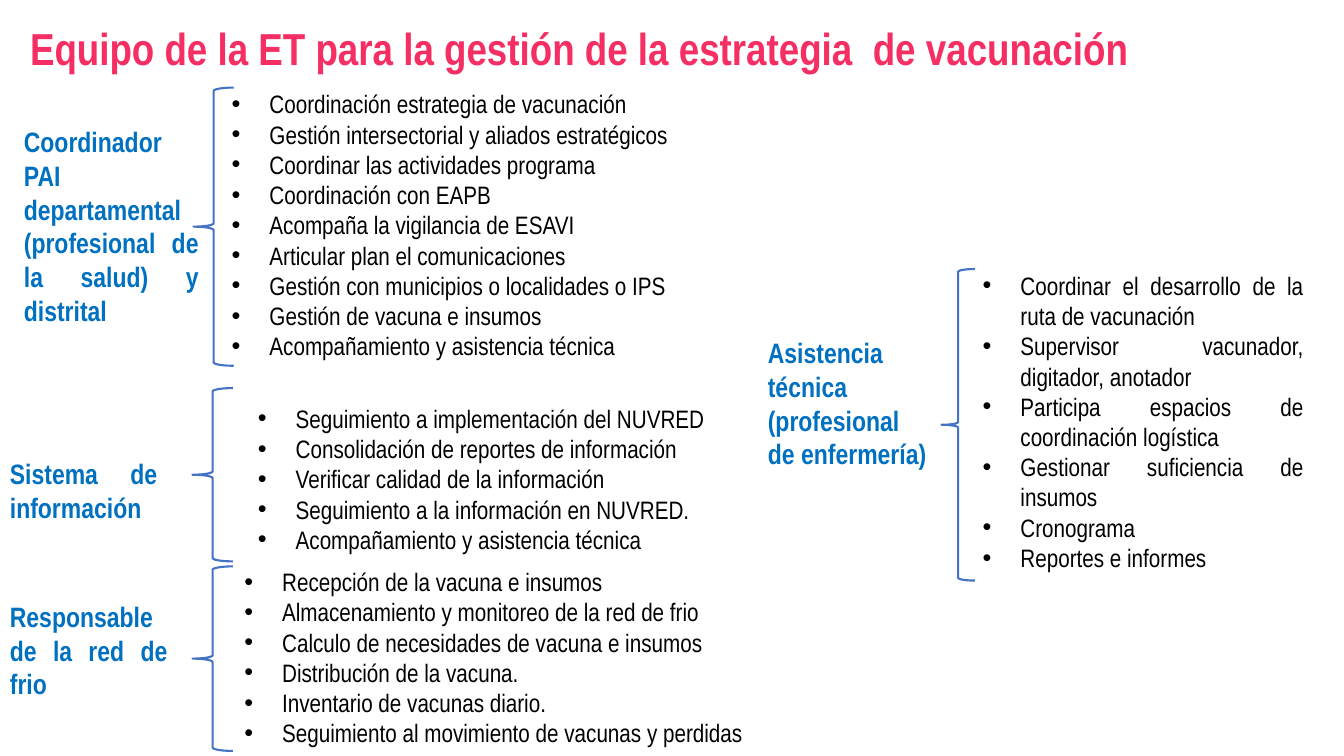
from lxml.etree import SubElement
from pptx import Presentation
from pptx.dml.color import RGBColor
from pptx.enum.shapes import MSO_SHAPE
from pptx.enum.text import MSO_AUTO_SIZE, PP_ALIGN
from pptx.oxml.ns import qn
from pptx.util import Pt

COLORS = {"title": "F52F63", "role": "0070C0", "task": "000000", "brace": "4472C4"}
FONT = "Arial Narrow"
INDENT = 27

TEAM = [
    {
        "role": "Coordinador PAI departamental (profesional de la salud) y distrital",
        "role_box": (10, 85.7, 139, 152.6),
        "brace_box": (138.2, 62.6, 28.8, 198.7),
        "tasks_box": (158.4, 59.8, 388, 203.8),
        "tasks": [
            "Coordinación estrategia de vacunación",
            "Gestión intersectorial y aliados estratégicos",
            "Coordinar las actividades programa",
            "Coordinación con EAPB",
            "Acompaña la vigilancia de ESAVI",
            "Articular plan el comunicaciones",
            "Gestión con municipios o localidades o IPS",
            "Gestión de vacuna e insumos",
            "Acompañamiento y asistencia técnica",
        ],
    },
    {
        "role": "Sistema de información",
        "role_box": (0, 322.8, 119.5, 56),
        "brace_box": (137.5, 277.2, 28.8, 123.8),
        "tasks_box": (177.1, 284.4, 409.7, 116.6),
        "tasks": [
            "Seguimiento a implementación del NUVRED",
            "Consolidación de reportes de información",
            "Verificar calidad de la información",
            "Seguimiento a la información en NUVRED.",
            "Acompañamiento y asistencia técnica",
        ],
    },
    {
        "role": "Responsable de la red de frio",
        "role_box": (0, 424.8, 126.7, 80),
        "brace_box": (137.5, 404.6, 28.8, 131.8),
        "tasks_box": (167.4, 401, 438.5, 138.2),
        "tasks": [
            "Recepción de la vacuna e insumos",
            "Almacenamiento y monitoreo de la red de frio",
            "Calculo de necesidades de vacuna e insumos",
            "Distribución de la vacuna.",
            "Inventario de vacunas diario.",
            "Seguimiento al movimiento de vacunas y perdidas",
        ],
    },
    {
        "role": "Asistencia técnica (profesional de enfermería)",
        "role_box": (541.4, 236.4, 131, 104),
        "brace_box": (672.5, 192.2, 23.8, 222.5),
        "tasks_box": (694.8, 189.4, 243.4, 225.4),
        "tasks": [
            "Coordinar el desarrollo de la ruta de vacunación",
            "Supervisor vacunador, digitador, anotador",
            "Participa espacios de coordinación logística",
            "Gestionar suficiencia de insumos",
            "Cronograma",
            "Reportes e informes",
        ],
    },
]


def write_text(paragraph, text, size, color, bold=False, align=None, bullet=False):
    """Fill a paragraph with formatted text."""
    run = paragraph.add_run()
    run.text = text
    run.font.name = FONT
    run.font.size = Pt(size)
    run.font.bold = bold
    run.font.color.rgb = RGBColor.from_string(COLORS[color])
    paragraph.alignment = align
    if bullet:
        properties = paragraph._p.get_or_add_pPr()
        properties.set("marL", str(Pt(INDENT)))
        properties.set("indent", str(-Pt(INDENT)))
        SubElement(properties, qn("a:buFont")).set("typeface", "Arial")
        SubElement(properties, qn("a:buChar")).set("char", "•")


class TeamSlide:
    """Draws the elements of the team diagram on one slide."""

    def __init__(self, slide):
        self.slide = slide

    def text(self, box, lines, **style):
        """Add a wrapped text box with one paragraph per line."""
        shape = self.slide.shapes.add_textbox(*map(Pt, box))
        frame = shape.text_frame
        frame.word_wrap = True
        frame.auto_size = MSO_AUTO_SIZE.SHAPE_TO_FIT_TEXT
        for index, line in enumerate(lines):
            paragraph = frame.add_paragraph() if index else frame.paragraphs[0]
            write_text(paragraph, line, **style)

    def title(self, box, text):
        """Add the slide heading."""
        self.text(box, [text], size=32, color="title", bold=True)

    def role(self, box, text):
        """Add the name of a team role."""
        self.text(box, [text], size=20, color="role", bold=True, align=PP_ALIGN.JUSTIFY)

    def tasks(self, box, lines):
        """Add the bulleted duties of a role."""
        self.text(box, lines, size=18, color="task", align=PP_ALIGN.JUSTIFY, bullet=True)

    def brace(self, box):
        """Add the brace between a role and its duties."""
        shape = self.slide.shapes.add_shape(MSO_SHAPE.LEFT_BRACE, *map(Pt, box))
        shape.shadow.inherit = False
        shape.fill.background()
        shape.line.color.rgb = RGBColor.from_string(COLORS["brace"])
        shape.line.width = Pt(1.5)


def main():
    """Build and save the team slide."""
    presentation = Presentation()
    presentation.slide_width = Pt(960)
    presentation.slide_height = Pt(540)
    team_slide = TeamSlide(presentation.slides.add_slide(presentation.slide_layouts[6]))
    team_slide.title(
        (14.4, 11.5, 924.5, 46),
        "Equipo de la ET para la gestión de la estrategia  de vacunación",
    )
    for member in TEAM:
        team_slide.role(member["role_box"], member["role"])
        team_slide.brace(member["brace_box"])
        team_slide.tasks(member["tasks_box"], member["tasks"])
    presentation.save("out.pptx")


if __name__ == "__main__":
    main()
